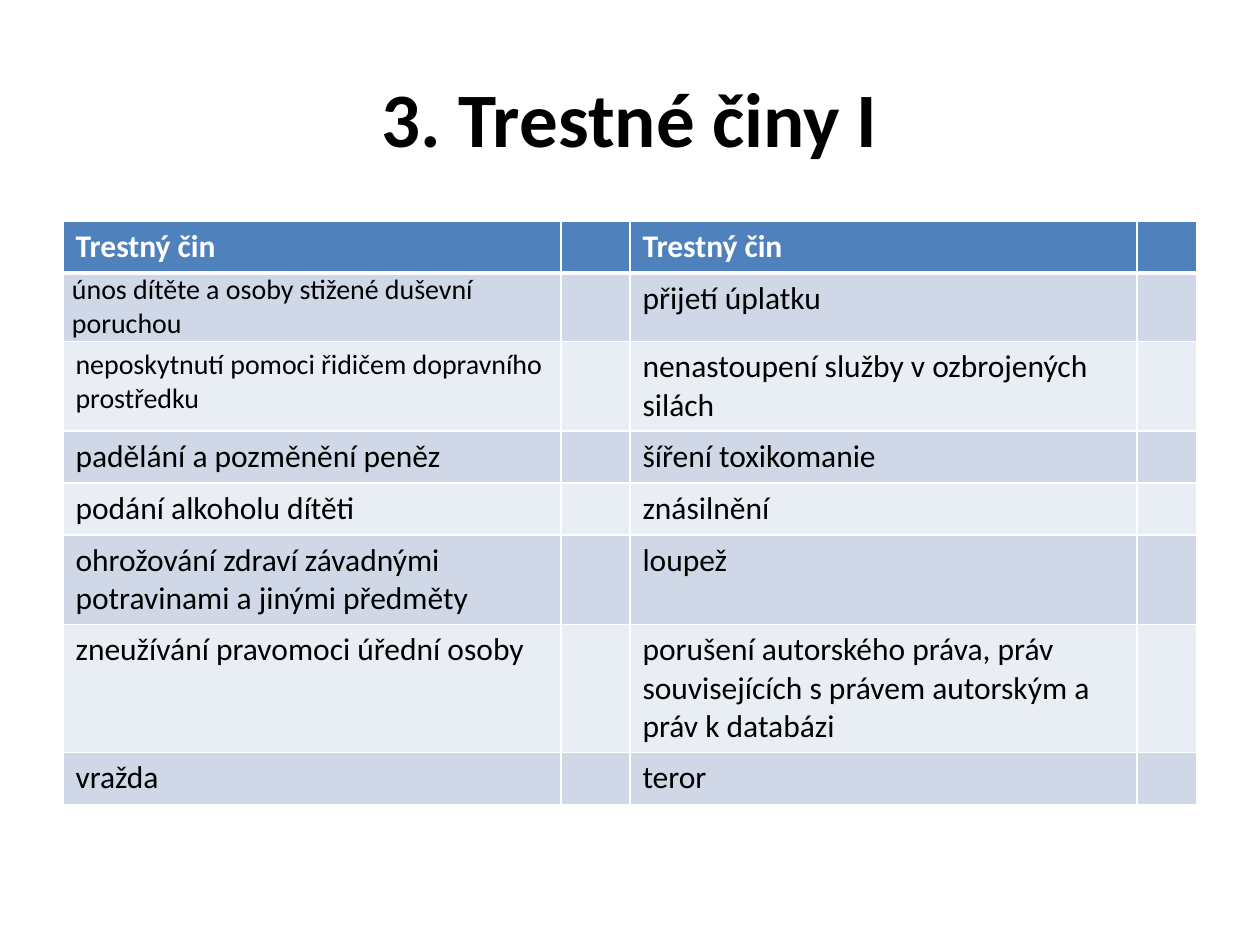
from dataclasses import dataclass

from lxml import etree
from pptx import Presentation
from pptx.dml.color import RGBColor
from pptx.enum import text
from pptx.oxml import ns
from pptx.util import Pt

EMU_PER_PX = 914400 / 126
FONT = "Calibri"
WHITE, BLACK = "FFFFFF", "000000"
HEADER_FILL, BAND_FILLS = "4F81BD", ("D0D8E8", "E9EDF4")
COLUMN_WIDTHS = (498, 69, 507, 60)
ROW_HEIGHT = 52


@dataclass
class Crime:
    name: str
    size: int = 18
    tight: bool = False


ROWS = [
    (Crime("Trestný čin"), Crime("Trestný čin")),
    (Crime("únos dítěte a osoby stižené duševní poruchou", 16, True), Crime("přijetí úplatku")),
    (Crime("neposkytnutí pomoci řidičem dopravního prostředku", 16),
     Crime("nenastoupení služby v ozbrojených silách")),
    (Crime("padělání a pozměnění peněz"), Crime("šíření toxikomanie")),
    (Crime("podání alkoholu dítěti"), Crime("znásilnění")),
    (Crime("ohrožování zdraví závadnými potravinami a jinými předměty"), Crime("loupež")),
    (Crime("zneužívání pravomoci úřední osoby"),
     Crime("porušení autorského práva, práv souvisejících s právem autorským a práv k databázi")),
    (Crime("vražda"), Crime("teror")),
]


def px(n: int) -> int:
    return round(n * EMU_PER_PX)


def rgb(color: str) -> RGBColor:
    return RGBColor.from_string(color)


def set_font(p, size: int, color: str, bold: bool) -> None:
    p.font.name, p.font.size, p.font.bold = FONT, Pt(size), bold
    p.font.color.rgb = rgb(color)


def set_borders(cell, widths: dict[str, int]) -> None:
    tc_pr = cell._tc.get_or_add_tcPr()
    for i, (side, width) in enumerate(widths.items()):
        ln = etree.Element(ns.qn(f"a:ln{side}"), w=str(Pt(width)))
        fill = etree.SubElement(ln, ns.qn("a:solidFill"))
        etree.SubElement(fill, ns.qn("a:srgbClr"), val=WHITE)
        tc_pr.insert(i, ln)


def fill_cell(cell, crime: Crime, row: int) -> None:
    header = row == 0
    cell.fill.solid()
    cell.fill.fore_color.rgb = rgb(HEADER_FILL if header else BAND_FILLS[(row - 1) % 2])
    set_borders(cell, {"L": 1, "R": 1, "T": 3 if row == 1 else 1, "B": 3 if header else 1})
    if crime.tight:
        cell.margin_left = cell.margin_right = px(9)
        cell.margin_top = cell.margin_bottom = 0
    p = cell.text_frame.paragraphs[0]
    if crime.name:
        p.text = crime.name
    set_font(p, crime.size, WHITE if header else BLACK, header)


def add_title(slide) -> None:
    sp = slide.shapes.title
    sp.left, sp.top, sp.width, sp.height = px(63), px(38), px(1134), px(157)
    tf = sp.text_frame
    tf.text = "3. Trestné činy I"
    tf.vertical_anchor = text.MSO_ANCHOR.MIDDLE
    p = tf.paragraphs[0]
    p.alignment = text.PP_ALIGN.CENTER
    set_font(p, 44, BLACK, True)


def add_crime_table(slide) -> None:
    frame = slide.shapes.add_table(len(ROWS), len(COLUMN_WIDTHS), px(63), px(221),
                                   px(sum(COLUMN_WIDTHS)), px(ROW_HEIGHT * len(ROWS)))
    table = frame.table
    for column, width in zip(table.columns, COLUMN_WIDTHS):
        column.width = px(width)
    for r, (left, right) in enumerate(ROWS):
        for c, crime in enumerate((left, Crime(""), right, Crime(""))):
            fill_cell(table.cell(r, c), crime, r)


def main() -> None:
    """Build the slide with the table of crimes."""
    prs = Presentation()
    prs.slide_width, prs.slide_height = px(1260), px(945)
    slide = prs.slides.add_slide(prs.slide_layouts[5])
    add_title(slide)
    add_crime_table(slide)
    prs.save("out.pptx")


if __name__ == "__main__":
    main()
